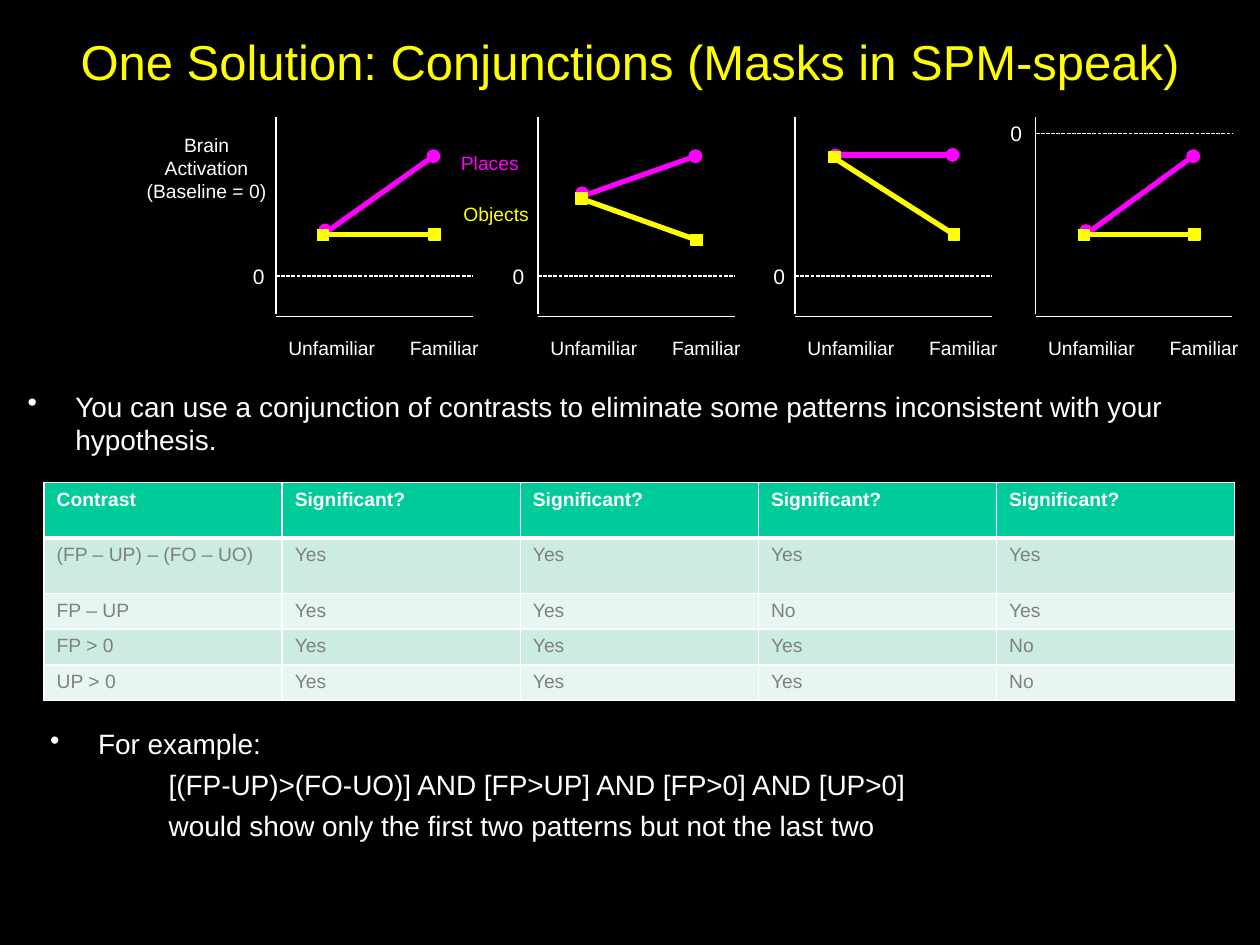
from dataclasses import dataclass

from lxml import etree
from pptx import Presentation
from pptx.dml.color import RGBColor
from pptx.enum.dml import MSO_LINE
from pptx.enum.shapes import MSO_CONNECTOR, MSO_SHAPE
from pptx.enum.text import MSO_ANCHOR, MSO_AUTO_SIZE, PP_ALIGN
from pptx.oxml.ns import qn
from pptx.util import Inches, Pt

STRAIGHT = MSO_CONNECTOR.STRAIGHT
DASHED = MSO_LINE.SQUARE_DOT
CIRCLE, SQUARE = MSO_SHAPE.OVAL, MSO_SHAPE.RECTANGLE
MIDDLE, TOP = MSO_ANCHOR.MIDDLE, MSO_ANCHOR.TOP
FIT, FIXED = MSO_AUTO_SIZE.SHAPE_TO_FIT_TEXT, MSO_AUTO_SIZE.NONE
CENTER, LEFT = PP_ALIGN.CENTER, PP_ALIGN.LEFT

WIDTH, HEIGHT = Inches(10), Inches(7.5)
COLUMNS, ROWS = 100, 75


@dataclass(frozen=True)
class Theme:
    font: str = "Arial"
    ground: str = "000000"
    ink: str = "FFFFFF"
    title: str = "FFFF00"
    places: str = "FF00FF"
    objects: str = "FFFF00"
    header: str = "00CC99"
    bands: tuple = ("CBECDE", "E7F6EF")
    cell_ink: str = "808080"
    title_size: float = 28
    body_size: float = 16
    zero_size: float = 12
    label_size: float = 11
    thin: float = 0.75
    thick: float = 3
    border: float = 1
    gap: float = 4


THEME = Theme()

PANELS = [
    {"left": 21.9, "zero": 12.6, "zero_left": -2.8,
     "places": [(3.9, 9), (3.6, 9.4), (12.5, 3.1)],
     "objects": [(3.75, 9.35), (3.8, 9.3), (12.6, 9.3)]},
    {"left": 42.7, "zero": 12.6, "zero_left": -3,
     "places": [(3.5, 6.05), (3.7, 6.2), (12.5, 3.1)],
     "objects": [(3.45, 6.45), (3.8, 6.6), (12.6, 9.75)]},
    {"left": 63.1, "zero": 12.6, "zero_left": -2.7,
     "places": [(3.2, 3.05), (3.2, 3), (12.5, 3)],
     "objects": [(3.15, 3.15), (3.2, 3.3), (12.6, 9.3)]},
    {"left": 82.2, "zero": 1.3, "zero_left": -3,
     "places": [(4, 9.05), (3.7, 9.5), (12.5, 3.1)],
     "objects": [(3.85, 9.35), (3.8, 9.3), (12.6, 9.3)]},
]

CONTRASTS = [
    ["Contrast"] + ["Significant?"] * 4,
    ["(FP – UP) – (FO – UO)", "Yes", "Yes", "Yes", "Yes"],
    ["FP – UP", "Yes", "Yes", "No", "Yes"],
    ["FP > 0", "Yes", "Yes", "Yes", "No"],
    ["UP > 0", "Yes", "Yes", "Yes", "No"],
]


def across(columns):
    return round(WIDTH * columns / COLUMNS)


def down(rows):
    return round(HEIGHT * rows / ROWS)


def place(box):
    left, top, width, height = box
    return across(left), down(top), across(width), down(height)


def apply(target, values):
    for name, value in values.items():
        setattr(target, name, value)


def style(font, size, color, bold=False):
    apply(font, {"name": THEME.font, "size": Pt(size), "bold": bold})
    font.color.rgb = RGBColor.from_string(color)


def add_text(page, box, lines, size, color, wrap=False, align=LEFT, anchor=TOP):
    frame = page.shapes.add_textbox(*place(box)).text_frame
    apply(frame, {"word_wrap": wrap, "vertical_anchor": anchor,
                  "auto_size": FIXED if wrap else FIT})
    for index, line in enumerate(lines):
        para = frame.paragraphs[0] if index == 0 else frame.add_paragraph()
        para.alignment = align
        span = para.add_run()
        span.text = line
        style(span.font, size, color)
    return frame


def add_line(page, start, end, color, weight, dash=None):
    line = page.shapes.add_connector(
        STRAIGHT, across(start[0]), down(start[1]), across(end[0]), down(end[1]))
    apply(line.line, {"width": Pt(weight), "dash_style": dash})
    line.line.color.rgb = RGBColor.from_string(color)
    etree.SubElement(line._element.spPr, qn("a:effectLst"))


def add_marker(page, kind, center, size, color):
    box = center[0] - size / 2, center[1] - size / 2, size, size
    marker = page.shapes.add_shape(kind, *place(box))
    marker.shadow.inherit = False
    marker.fill.solid()
    for paint in (marker.fill.fore_color, marker.line.color):
        paint.rgb = RGBColor.from_string(color)
    marker.line.width = Pt(THEME.thin)


def add_series(page, left, top, points, kind, size, color):
    first, start, end = [(left + x, top + y) for x, y in points]
    add_line(page, start, end, color, THEME.thick)
    for center in (first, end):
        add_marker(page, kind, center, size, color)


def add_panel(page, box, panel):
    left, top, width, height = box
    base, zero = top + height, top + panel["zero"]
    add_line(page, (left, top), (left, base - 0.2), THEME.ink, THEME.thin)
    add_line(page, (left, base), (left + width, base), THEME.ink, THEME.thin)
    add_line(page, (left, zero), (left + width, zero), THEME.ink, THEME.thin, DASHED)
    add_text(page, (left + panel["zero_left"], zero - 1.5, 3, 3), ["0"],
             THEME.zero_size, THEME.ink)
    for name, shift, span in (("Unfamiliar", 0, 9), ("Familiar", 9.65, 7.5)):
        add_text(page, (left + shift, base + 1.1, span, 2.9), [name],
                 THEME.label_size, THEME.ink)
    add_series(page, left, top, panel["places"], CIRCLE, 1, THEME.places)
    add_series(page, left, top, panel["objects"], SQUARE, 0.9, THEME.objects)


def add_graphs(page, top):
    for panel in PANELS:
        add_panel(page, (panel["left"], top, 15.6, 15.8), panel)
    add_text(page, (10.6, top + 0.8, 11.6, 6.6), ["Brain", "Activation", "(Baseline = 0)"],
             THEME.label_size, THEME.ink, align=CENTER)
    add_text(page, (35.6, top + 2.2, 6.6, 2.9), ["Places"], THEME.label_size, THEME.places)
    add_text(page, (35.8, top + 6.3, 7.3, 2.9), ["Objects"], THEME.label_size, THEME.objects)


def add_points(page, box, lines):
    frame = add_text(page, box, lines, THEME.body_size, THEME.ink, wrap=True)
    for index, para in enumerate(frame.paragraphs):
        margin, indent = (9.4, 0) if index else (3.8, -3.8)
        properties = para._p.get_or_add_pPr()
        properties.set("marL", str(across(margin)))
        properties.set("indent", str(across(indent)))
        if index:
            para.space_before = Pt(THEME.gap)
        else:
            etree.SubElement(properties, qn("a:buChar"), char="•")


def add_border(cell, side, weight):
    edge = etree.SubElement(cell._tc.get_or_add_tcPr(), qn("a:ln" + side), w=str(Pt(weight)))
    fill = etree.SubElement(edge, qn("a:solidFill"))
    etree.SubElement(fill, qn("a:srgbClr"), val=THEME.ink)


def add_contrasts(page, box):
    table = page.shapes.add_table(len(CONTRASTS), len(CONTRASTS[0]), *place(box)).table
    for row, values in enumerate(CONTRASTS):
        table.rows[row].height = down(4.4 if row < 2 else 2.8)
        heading = row == 0
        fill = THEME.header if heading else THEME.bands[(row - 1) % 2]
        ink = THEME.ink if heading else THEME.cell_ink
        heavy = {0: "B", 1: "T"}.get(row)
        for column, value in enumerate(values):
            cell = table.cell(row, column)
            for side in "LRTB":
                add_border(cell, side, THEME.thick if side == heavy else THEME.border)
            cell.fill.solid()
            cell.fill.fore_color.rgb = RGBColor.from_string(fill)
            span = cell.text_frame.paragraphs[0].add_run()
            span.text = value
            style(span.font, THEME.label_size, ink, heading)


def main():
    deck = Presentation()
    apply(deck, {"slide_width": WIDTH, "slide_height": HEIGHT})
    page = deck.slides.add_slide(deck.slide_layouts[6])
    page.background.fill.solid()
    page.background.fill.fore_color.rgb = RGBColor.from_string(THEME.ground)
    add_text(page, (0, 2, COLUMNS, 5.7), ["One Solution: Conjunctions (Masks in SPM-speak)"],
             THEME.title_size, THEME.title, wrap=True, align=CENTER, anchor=MIDDLE)
    add_graphs(page, 9.3)
    add_points(page, (1.2, 30.4, 96.9, 8.7), [
        "You can use a conjunction of contrasts to eliminate some patterns "
        "inconsistent with your hypothesis."])
    add_contrasts(page, (3.5, 38.3, 94.5, 17.2))
    add_points(page, (3, 57.2, 96.9, 8.7), [
        "For example:",
        "[(FP-UP)>(FO-UO)] AND [FP>UP] AND [FP>0] AND [UP>0]",
        "would show only the first two patterns but not the last two"])
    deck.save("out.pptx")


if __name__ == "__main__":
    main()
